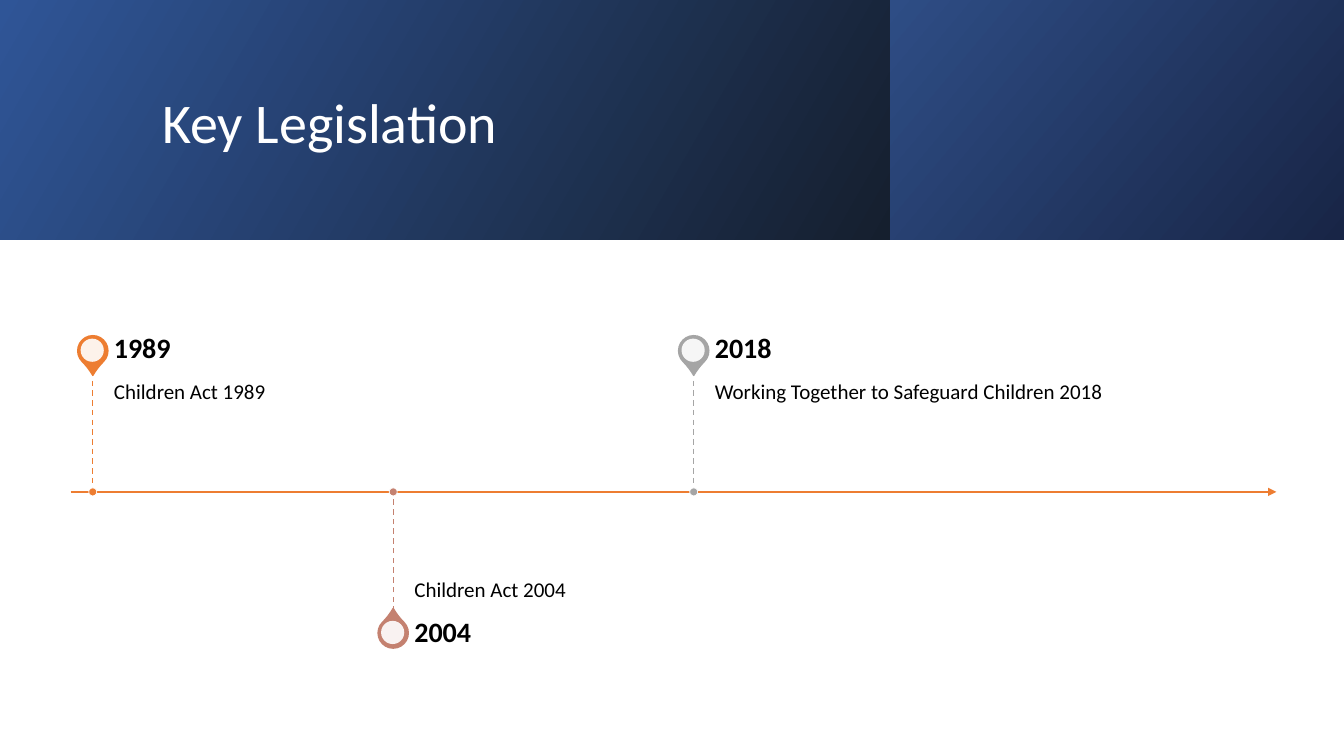
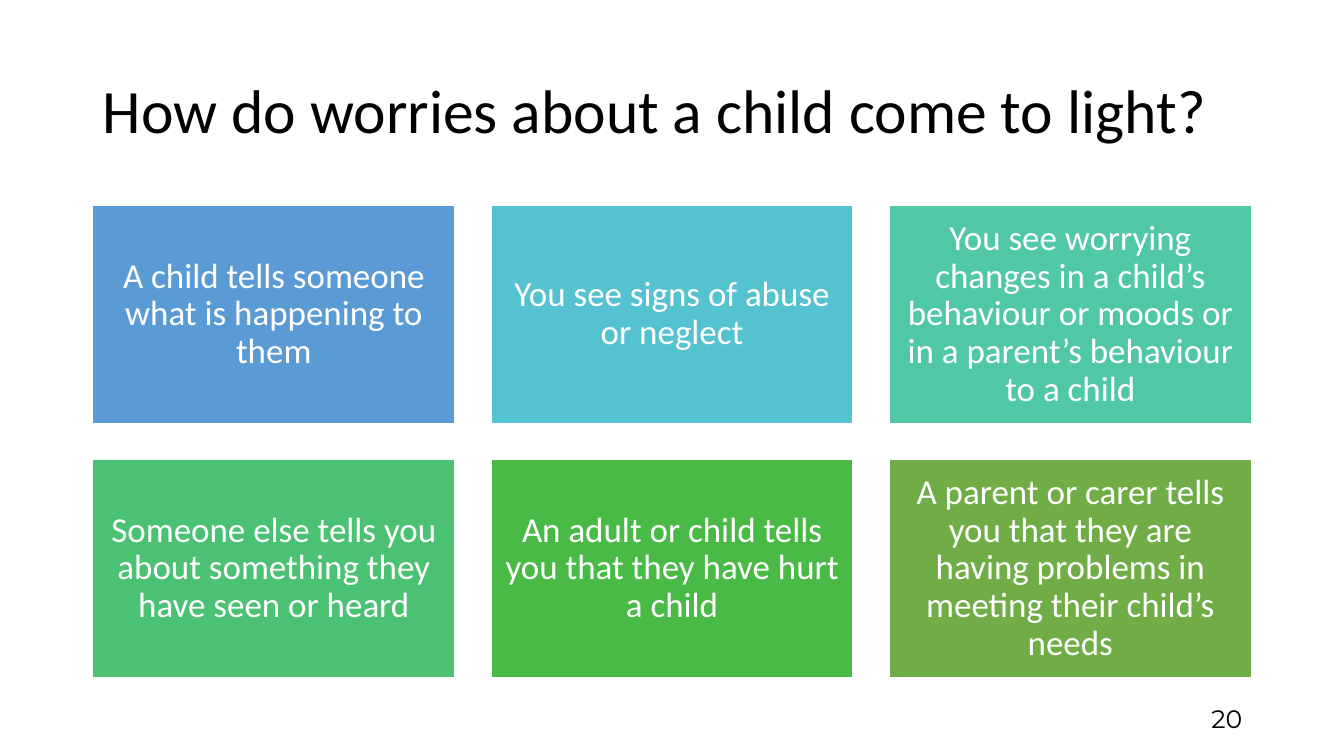
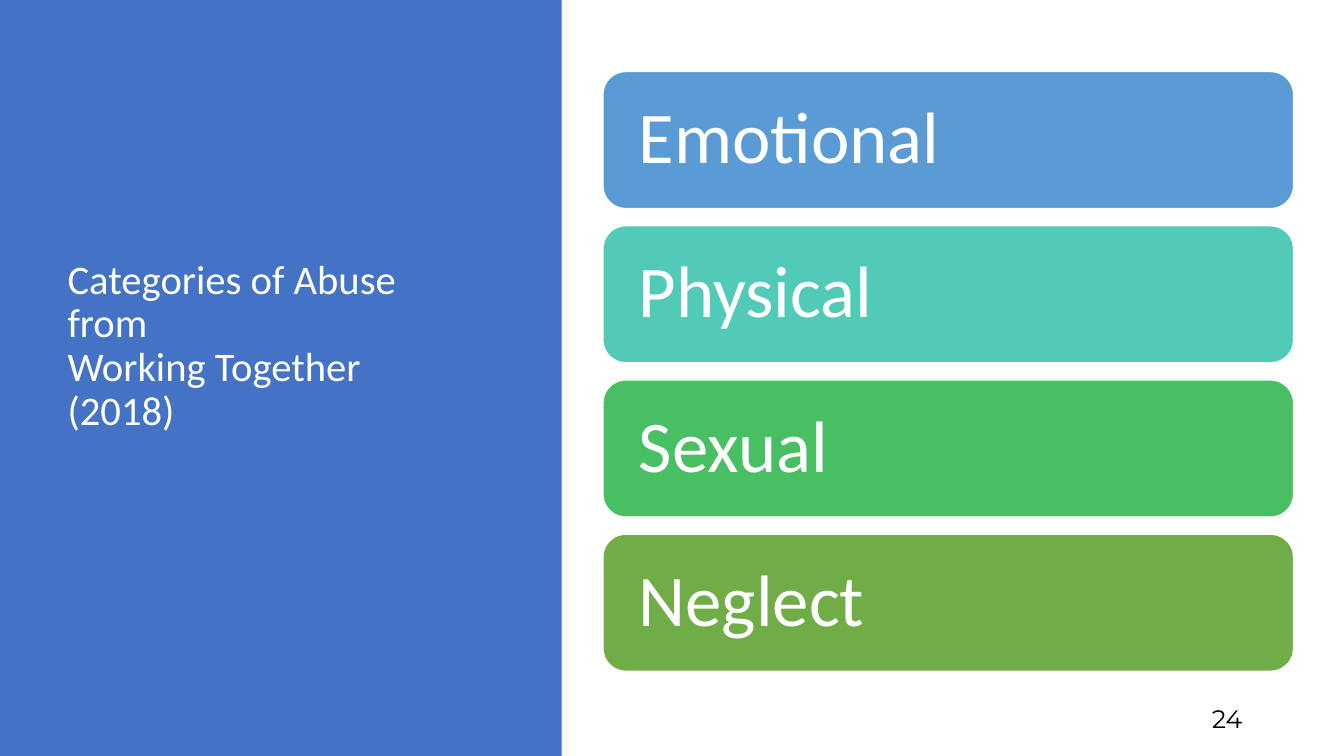
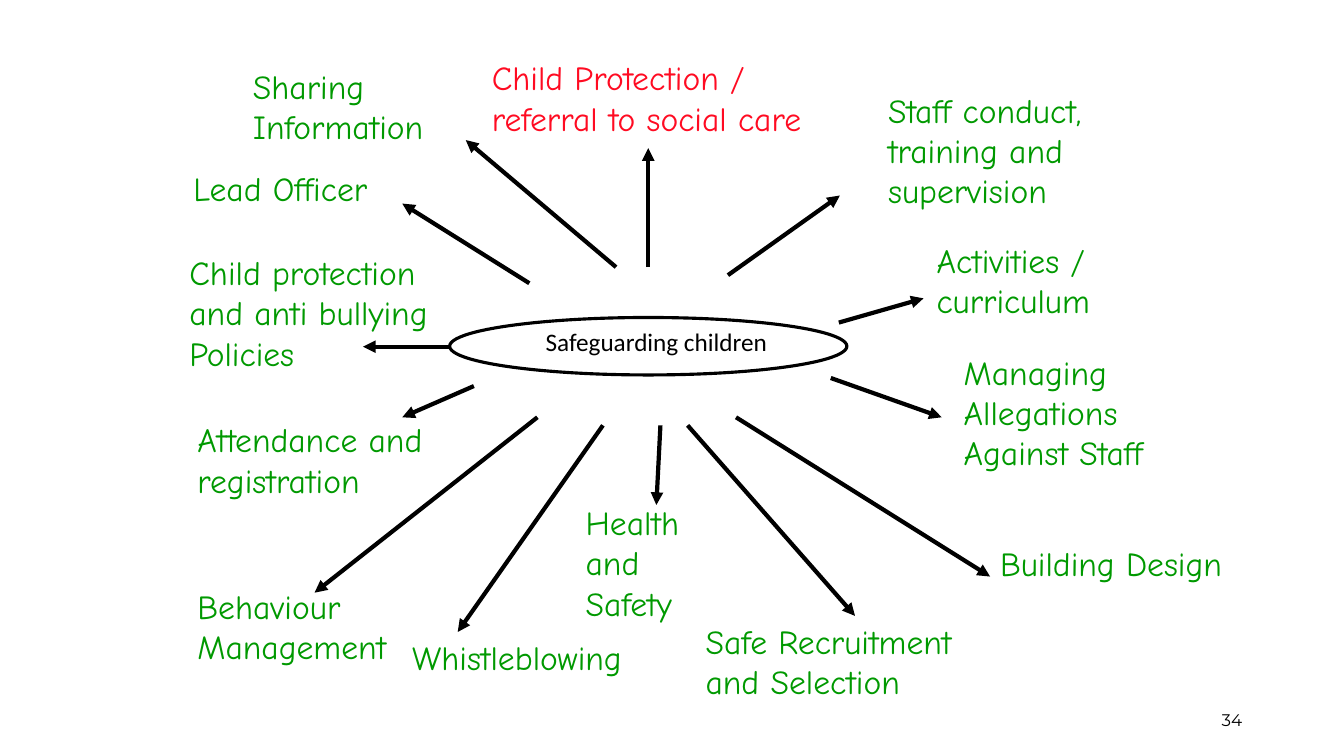
from lxml import etree
from pptx import Presentation
from pptx.dml.color import RGBColor
from pptx.enum.dml import MSO_LINE
from pptx.enum.shapes import MSO_CONNECTOR, MSO_SHAPE
from pptx.enum.text import MSO_ANCHOR, MSO_AUTO_SIZE, PP_ALIGN
from pptx.oxml.ns import qn
from pptx.util import Inches, Pt

RECT, ROUNDED = MSO_SHAPE.RECTANGLE, MSO_SHAPE.ROUNDED_RECTANGLE
OVAL, TEARDROP = MSO_SHAPE.OVAL, MSO_SHAPE.TEAR
STRAIGHT, DASH = MSO_CONNECTOR.STRAIGHT, MSO_LINE.DASH
LEFT, CENTER, RIGHT = PP_ALIGN.LEFT, PP_ALIGN.CENTER, PP_ALIGN.RIGHT
TOP, MIDDLE, BOTTOM = MSO_ANCHOR.TOP, MSO_ANCHOR.MIDDLE, MSO_ANCHOR.BOTTOM
FIXED = MSO_AUTO_SIZE.NONE

BLACK = RGBColor(0x00, 0x00, 0x00)
WHITE = RGBColor(0xFF, 0xFF, 0xFF)
BLUE = RGBColor(0x44, 0x72, 0xC4)
SKY = RGBColor(0x5B, 0x9B, 0xD5)
CYAN = RGBColor(0x55, 0xC3, 0xCF)
AQUA = RGBColor(0x52, 0xCA, 0xB8)
TEAL = RGBColor(0x50, 0xC8, 0xA7)
MINT = RGBColor(0x4B, 0xC1, 0x74)
EMERALD = RGBColor(0x49, 0xBF, 0x64)
LEAF = RGBColor(0x4A, 0xBA, 0x46)
OLIVE = RGBColor(0x70, 0xAD, 0x47)
GREEN = RGBColor(0x00, 0x99, 0x00)
RED = RGBColor(0xFF, 0x0B, 0x22)
ORANGE = RGBColor(0xED, 0x7D, 0x31)
PALE_ORANGE = RGBColor(0xFD, 0xF2, 0xEA)
CLAY = RGBColor(0xC4, 0x81, 0x70)
PALE_CLAY = RGBColor(0xF9, 0xF2, 0xF1)
GREY = RGBColor(0xA5, 0xA5, 0xA5)
PALE_GREY = RGBColor(0xF6, 0xF6, 0xF6)
BAND_BLUE = RGBColor(0x2F, 0x55, 0x97)
BAND_DARK = RGBColor(0x15, 0x1F, 0x2E)
SIDE_BLUE = RGBColor(0x2E, 0x4D, 0x85)
SIDE_DARK = RGBColor(0x18, 0x25, 0x46)


def write(box, text, size, color, font="Calibri", align=LEFT, anchor=MIDDLE,
          insets=(0.1, 0.05, 0.1, 0.05), spacing=0.9, bold=False):
    frame = box.text_frame
    frame.word_wrap = True
    frame.auto_size = FIXED
    frame.vertical_anchor = anchor
    (frame.margin_left, frame.margin_top,
     frame.margin_right, frame.margin_bottom) = [Inches(inset) for inset in insets]
    for index, line in enumerate(text.split("\n")):
        para = frame.add_paragraph() if index else frame.paragraphs[0]
        para.alignment = align
        para.line_spacing = spacing
        span = para.add_run()
        span.text = line
        span.font.name = font
        span.font.size = Pt(size)
        span.font.bold = bold
        span.font.color.rgb = color


def draw(page, kind, place, fill=None, line=None, width=1):
    shape = page.shapes.add_shape(kind, *[Inches(length) for length in place])
    if fill is None:
        shape.fill.background()
    else:
        shape.fill.solid()
        shape.fill.fore_color.rgb = fill
    if line is None:
        shape.line.fill.background()
    else:
        shape.line.color.rgb = line
        shape.line.width = Pt(width)
    return shape


deck = Presentation()
deck.slide_width, deck.slide_height = Inches(13.33), Inches(7.5)
title_only, blank = deck.slide_layouts[5], deck.slide_layouts[6]
legislation, worries, categories = [deck.slides.add_slide(title_only) for _ in range(3)]
safeguarding = deck.slides.add_slide(blank)
arrows = []

for left, width, angle, light, dark in [
    (0, 8.83, 330, BAND_BLUE, BAND_DARK),
    (8.83, 4.5, 320, SIDE_BLUE, SIDE_DARK),
]:
    band = draw(legislation, RECT, (left, 0, width, 2.38))
    band.fill.gradient()
    band.fill.gradient_angle = angle
    for stop, color in zip(band.fill.gradient_stops, (light, dark)):
        stop.color.rgb = color

draw(categories, RECT, (0, 0, 5.57, 7.5), BLUE)

for page, place, text, size, color in [
    (legislation, (1.51, 0.38, 10.63, 1.72), "Key Legislation", 40, WHITE),
    (worries, (0.92, 0.4, 11.5, 1.45), "How do worries about a child come to light?", 44, BLACK),
    (categories, (0.57, 0.68, 4.16, 5.52),
     "Categories of Abuse from\nWorking Together (2018)", 29, WHITE),
]:
    title = page.shapes.title
    title.left, title.top, title.width, title.height = [Inches(length) for length in place]
    write(title, text, size, color)
    page.shapes.element.append(title.element)

for page, number, size in [(worries, "20", 18), (categories, "24", 18), (safeguarding, "34", 12)]:
    box = page.shapes.add_textbox(Inches(9.42), Inches(6.95), Inches(3), Inches(0.4))
    write(box, number, size, BLACK, "Montserrat", RIGHT)

AXIS = 4.88
axis = legislation.shapes.add_connector(
    STRAIGHT, Inches(0.7), Inches(AXIS), Inches(12.66), Inches(AXIS))
axis.line.color.rgb = ORANGE
axis.line.width = Pt(1.5)
arrows.append(axis)

events = [
    ("1989", "Children Act 1989", ORANGE, PALE_ORANGE),
    ("2004", "Children Act 2004", CLAY, PALE_CLAY),
    ("2018", "Working Together to Safeguard Children 2018", GREY, PALE_GREY),
]
for index, (year, event, color, pale) in enumerate(events):
    center = 0.92 + 2.98 * index
    above = index % 2 == 0
    if above:
        pin_middle, stem_end, year_top, event_top = 3.48, 3.68, 3.26, 3.68
        turn, anchor, insets = 135, TOP, (0, 0.1, 0.1, 0.16)
    else:
        pin_middle, stem_end, year_top, event_top = 6.28, 6.07, 6.07, AXIS
        turn, anchor, insets = 315, BOTTOM, (0, 0.16, 0, 0.1)
    stem = legislation.shapes.add_connector(
        STRAIGHT, Inches(center), Inches(stem_end), Inches(center), Inches(AXIS))
    stem.line.color.rgb = color
    stem.line.width = Pt(1)
    stem.line.dash_style = DASH
    pin = draw(legislation, TEARDROP, (center - 0.15, pin_middle - 0.15, 0.3, 0.3), color, color)
    pin.adjustments[0] = 1.15
    pin.rotation = turn
    draw(legislation, OVAL, (center - 0.12, pin_middle - 0.12, 0.23, 0.23), pale)
    draw(legislation, OVAL, (center - 0.04, AXIS - 0.04, 0.08, 0.08), color, WHITE, 0.5)
    text_left = Inches(center + 0.21)
    box = legislation.shapes.add_textbox(text_left, Inches(event_top), Inches(4.96), Inches(1.19))
    write(box, event, 15, BLACK, anchor=anchor, insets=insets)
    box = legislation.shapes.add_textbox(text_left, Inches(year_top), Inches(4.96), Inches(0.42))
    write(box, year, 20, BLACK, insets=(0, 0, 0.14, 0), bold=True)

tiles = [
    ("A child tells someone what is happening to them", SKY),
    ("You see signs of abuse or neglect", CYAN),
    ("You see worrying changes in a child’s behaviour or moods or in a parent’s "
     "behaviour to a child", TEAL),
    ("Someone else tells you about something they have seen or heard", MINT),
    ("An adult or child tells you that they have hurt a child", LEAF),
    ("A parent or carer tells you that they are having problems in meeting their "
     "child’s needs", OLIVE),
]
for index, (text, color) in enumerate(tiles):
    row, column = divmod(index, 3)
    tile = draw(worries, RECT, (0.92 + 3.95 * column, 2.04 + 2.52 * row, 3.59, 2.16), color, WHITE)
    write(tile, text, 25, WHITE, align=CENTER, insets=(0.1, 0.1, 0.1, 0.1))

bars = [("Emotional", SKY), ("Physical", AQUA), ("Sexual", EMERALD), ("Neglect", OLIVE)]
for index, (text, color) in enumerate(bars):
    bar = draw(categories, ROUNDED, (5.98, 0.71 + 1.53 * index, 6.85, 1.36), color, WHITE)
    write(bar, text, 52, WHITE, insets=(0.29, 0.22, 0.29, 0.22))

draw(safeguarding, OVAL, (4.46, 3.15, 3.94, 0.57), line=BLACK, width=2.25)
box = safeguarding.shapes.add_textbox(Inches(4.72), Inches(3.19), Inches(3.58), Inches(0.4))
write(box, "Safeguarding children", 18, BLACK, align=CENTER, anchor=TOP, spacing=1)

topics = [
    ("Child Protection / referral to social care", RED,
     (4.78, 0.52, 3.83, 0.91), (6.43, 2.65, 6.43, 1.47)),
    ("Staff conduct, training and supervision", GREEN,
     (8.71, 0.84, 2.6, 1.31), (7.22, 2.73, 8.33, 1.94)),
    ("Activities / curriculum", GREEN, (9.19, 2.33, 2.25, 0.91), (8.32, 3.2, 9.16, 2.96)),
    ("Managing Allegations Against Staff", GREEN,
     (9.46, 3.44, 2.17, 1.72), (8.24, 3.75, 9.34, 4.14)),
    ("Building Design", GREEN, (9.82, 5.34, 2.5, 0.91), (7.3, 4.14, 9.82, 5.72)),
    ("Safe Recruitment and Selection", GREEN, (6.9, 6.11, 3, 0.91), (6.82, 4.22, 8.48, 6.11)),
    ("Health and Safety", GREEN, (5.71, 4.93, 1.58, 1.31), (6.55, 4.22, 6.51, 5.01)),
    ("Whistleblowing", GREEN, (3.99, 6.27, 2.68, 0.5), (5.98, 4.22, 4.54, 6.27)),
    ("Behaviour Management", GREEN, (1.86, 5.76, 2.17, 0.91), (5.33, 4.14, 3.12, 5.88)),
    ("Attendance and registration", GREEN, (1.86, 4.11, 2.72, 0.91), (4.7, 3.83, 3.99, 4.14)),
    ("Child protection and anti bullying Policies", GREEN,
     (1.78, 2.45, 2.91, 1.31), (4.46, 3.44, 3.6, 3.44)),
    ("Lead Officer", GREEN, (1.82, 1.62, 2.72, 0.5), (5.25, 2.81, 3.99, 2.02)),
    ("Sharing Information", GREEN, (2.41, 0.6, 2.72, 0.91), (6.11, 2.65, 4.62, 1.39)),
]
for text, color, place, ends in topics:
    spoke = safeguarding.shapes.add_connector(STRAIGHT, *[Inches(end) for end in ends])
    spoke.line.color.rgb = BLACK
    spoke.line.width = Pt(3)
    arrows.append(spoke)
    box = safeguarding.shapes.add_textbox(*[Inches(length) for length in place])
    write(box, text, 24, color, "Comic Neue", anchor=TOP, spacing=1)

for arrow in arrows:
    outline = arrow.element.spPr.find(qn("a:ln"))
    etree.SubElement(outline, qn("a:tailEnd"), type="triangle")

for page in deck.slides:
    for shape in page.shapes:
        if shape.element.tag == qn("p:cxnSp"):
            etree.SubElement(shape.element.spPr, qn("a:effectLst"))
        else:
            shape.shadow.inherit = False

deck.save("out.pptx")
